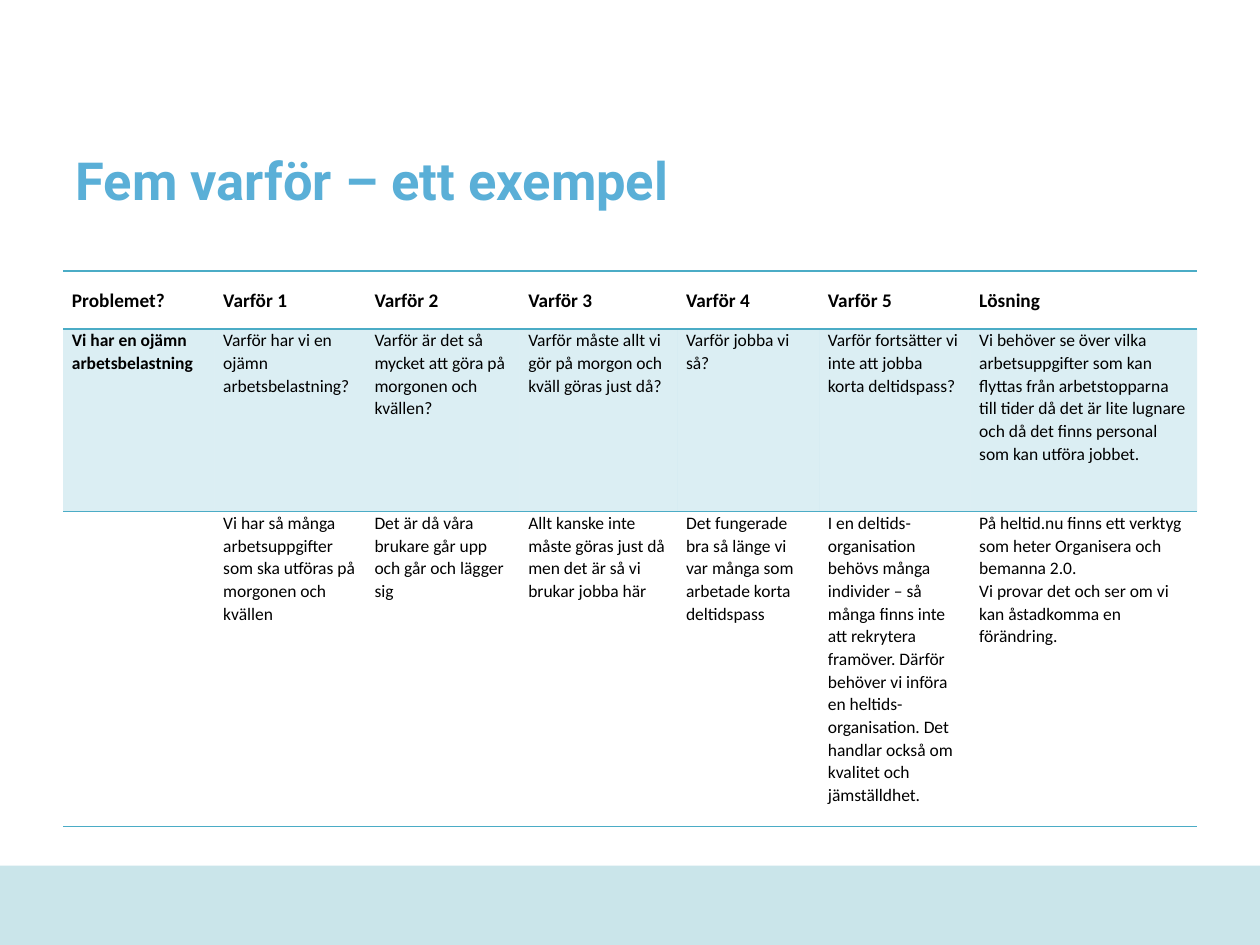
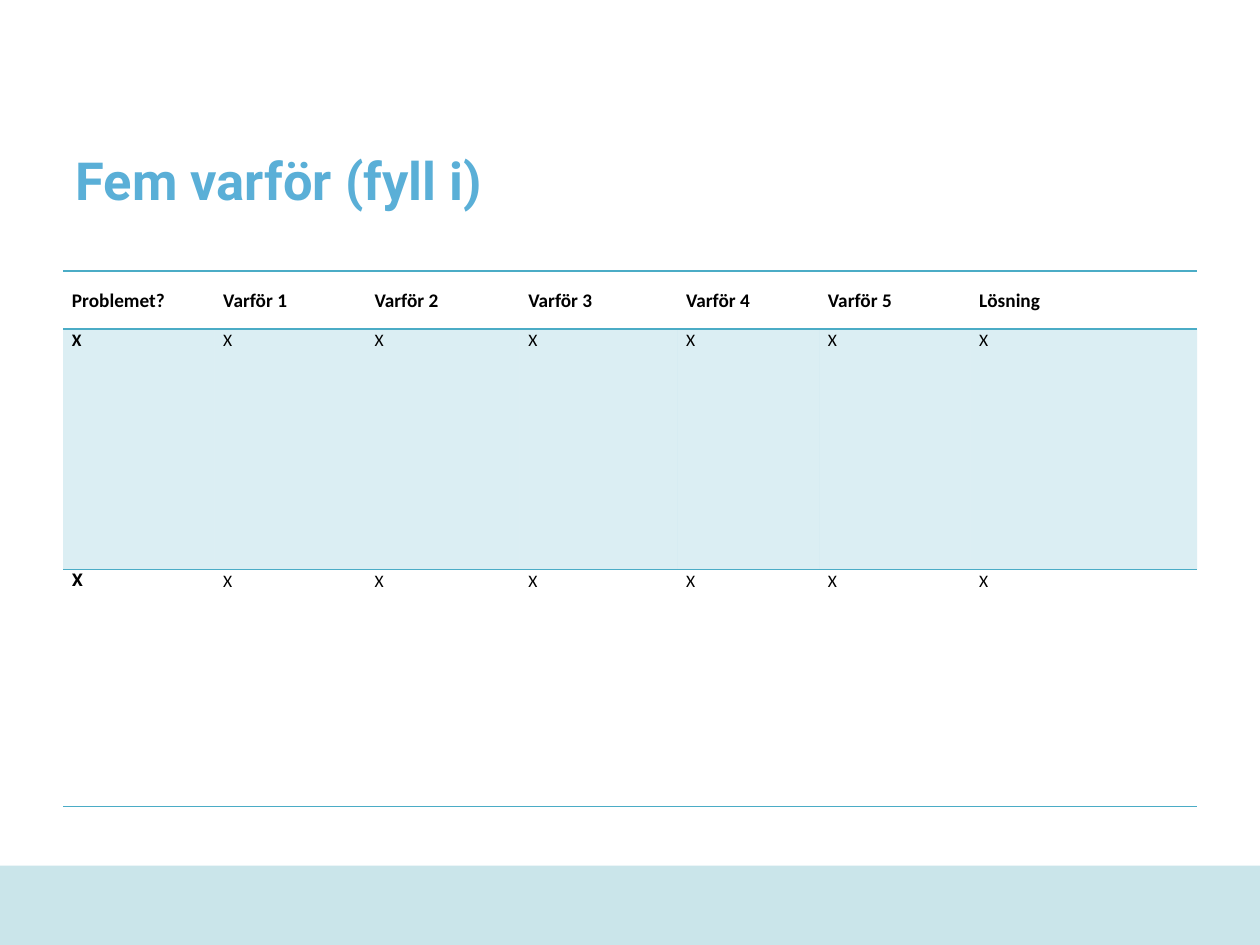
from dataclasses import dataclass

from lxml.etree import SubElement
from pptx import Presentation
from pptx.dml.color import RGBColor
from pptx.enum.shapes import MSO_SHAPE
from pptx.enum.text import MSO_ANCHOR, MSO_AUTO_SIZE, PP_ALIGN
from pptx.oxml.ns import qn
from pptx.util import Cm, Pt


@dataclass(frozen=True)
class Theme:
    title_color: str = "5AAFD7"
    footer_color: str = "CAE5EA"
    accent: str = "4BACC6"
    text_color: str = "000000"
    band_opacity: int = 20
    title_font: str = "Roboto"
    body_font: str = "Calibri"
    title_size: float = 30
    header_size: float = 11
    body_size: float = 10
    line_spacing: float = 1.07
    rule_width: float = 1


SLIDE_WIDTH, SLIDE_HEIGHT = Cm(25.4), Cm(19.05)
MARGIN = Cm(1.27)
NO_STYLE = "{2D5ABB26-0587-4C30-8999-92F81FD0307C}"
COLUMN_WIDTHS = [3.05, 3.05, 3.1, 3.18, 2.86, 3.05, 4.57]
HEADINGS = ["Problemet?", *(f"Varför {number}" for number in range(1, 6)), "Lösning"]

EXAMPLE_ROWS = [
    [
        "Vi har en ojämn arbetsbelastning",
        "Varför har vi en ojämn arbetsbelastning?",
        "Varför är det så mycket att göra på morgonen och kvällen?",
        "Varför måste allt vi gör på morgon och kväll göras just då?",
        "Varför jobba vi så?",
        "Varför fortsätter vi inte att jobba korta deltidspass?",
        "Vi behöver se över vilka arbetsuppgifter som kan flyttas från "
        "arbetstopparna till tider då det är lite lugnare och då det finns "
        "personal som kan utföra jobbet.",
    ],
    [
        "",
        "Vi har så många arbetsuppgifter som ska utföras på morgonen och kvällen",
        "Det är då våra brukare går upp och går och lägger sig",
        "Allt kanske inte måste göras just då men det är så vi brukar jobba här",
        "Det fungerade bra så länge vi var många som arbetade korta deltidspass",
        "I en deltids-organisation behövs många individer – så många finns inte "
        "att rekrytera framöver. Därför behöver vi införa en "
        "heltids-organisation. Det handlar också om kvalitet och jämställdhet.",
        "På heltid.nu finns ett verktyg som heter Organisera och bemanna 2.0.\n"
        "Vi provar det och ser om vi kan åstadkomma en förändring.",
    ],
]
BLANK_ROWS = [["X"] * len(HEADINGS)] * 2


def apply_format(target, values):
    for name, value in values.items():
        setattr(target, name, value)


class DeckBuilder:
    def __init__(self, theme):
        self.theme = theme
        self.deck = Presentation()
        self.deck.slide_width, self.deck.slide_height = SLIDE_WIDTH, SLIDE_HEIGHT
        self.page = None

    def add_page(self, title):
        self.page = self.deck.slides.add_slide(self.deck.slide_layouts[5])
        self.add_footer_band()
        self.set_title(title)

    def add_footer_band(self):
        top = Cm(17.45)
        band = self.page.shapes.add_shape(
            MSO_SHAPE.RECTANGLE, 0, top, SLIDE_WIDTH, SLIDE_HEIGHT - top)
        band.shadow.inherit = False
        band.fill.solid()
        band.fill.fore_color.rgb = RGBColor.from_string(self.theme.footer_color)
        band.line.fill.background()

    def set_title(self, text):
        box = self.page.shapes.title
        apply_format(box, dict(left=MARGIN, top=Cm(2.03),
                               width=SLIDE_WIDTH - 2 * MARGIN, height=Cm(3.18)))
        apply_format(box.text_frame, dict(
            text=text, word_wrap=True, auto_size=MSO_AUTO_SIZE.NONE,
            vertical_anchor=MSO_ANCHOR.MIDDLE))
        para = box.text_frame.paragraphs[0]
        para.alignment = PP_ALIGN.LEFT
        self.style_text(para.runs[0], self.theme.title_size, True,
                        self.theme.title_font, self.theme.title_color)

    def style_text(self, span, size, bold, font=None, color=None):
        apply_format(span.font, dict(
            name=font or self.theme.body_font, size=Pt(size), bold=bold))
        span.font.color.rgb = RGBColor.from_string(color or self.theme.text_color)

    def add_why_table(self, body_rows, row_heights, last_problem_font=None):
        rows = [HEADINGS, *body_rows]
        frame = self.page.shapes.add_table(
            len(rows), len(HEADINGS), MARGIN, Cm(5.46),
            Cm(sum(COLUMN_WIDTHS)), Cm(sum(row_heights)))
        table = frame.table
        apply_format(table, dict(first_row=False, horz_banding=False))
        frame._element.find(".//" + qn("a:tableStyleId")).text = NO_STYLE
        for column, width in zip(table.columns, COLUMN_WIDTHS):
            column.width = Cm(width)
        for row, height in zip(table.rows, row_heights):
            row.height = Cm(height)

        for row_index, texts in enumerate(rows):
            header, last = row_index == 0, row_index == len(rows) - 1
            for column_index, text in enumerate(texts):
                cell = table.cell(row_index, column_index)
                problem = column_index == 0
                self.fill_cell(cell, text, header, bold=header or problem,
                               font=last_problem_font if last and problem else None)
                # Rules frame the header and close the table
                if row_index < 2:
                    self.add_rule(cell, "a:lnT")
                if header or last:
                    self.add_rule(cell, "a:lnB")
                if row_index == 1:
                    self.shade(cell)
                else:
                    cell.fill.background()

    def fill_cell(self, cell, text, header, bold, font):
        apply_format(cell, dict(
            text=text, margin_left=Cm(0.18), margin_right=Cm(0.18),
            margin_top=0, margin_bottom=0,
            vertical_anchor=MSO_ANCHOR.MIDDLE if header else MSO_ANCHOR.TOP))
        size = self.theme.header_size if header else self.theme.body_size
        for para in cell.text_frame.paragraphs:
            para.line_spacing = self.theme.line_spacing
            for span in para.runs:
                self.style_text(span, size, bold, font)

    def add_rule(self, cell, edge):
        line = SubElement(cell._tc.get_or_add_tcPr(), qn(edge),
                          w=str(Pt(self.theme.rule_width)))
        fill = SubElement(line, qn("a:solidFill"))
        SubElement(fill, qn("a:srgbClr"), val=self.theme.accent)

    def shade(self, cell):
        cell.fill.solid()
        cell.fill.fore_color.rgb = RGBColor.from_string(self.theme.accent)
        color = cell._tc.tcPr.find(qn("a:solidFill")).find(qn("a:srgbClr"))
        SubElement(color, qn("a:alpha"), val=str(self.theme.band_opacity * 1000))


def main():
    theme = Theme()
    builder = DeckBuilder(theme)

    # Worked example
    builder.add_page("Fem varför – ett exempel")
    builder.add_why_table(EXAMPLE_ROWS, [1.17, 3.68, 6.35])

    # Form to fill in
    builder.add_page("Fem varför (fyll i)")
    builder.add_why_table(BLANK_ROWS, [1.17, 4.85, 4.78], theme.title_font)

    builder.deck.save("out.pptx")


if __name__ == "__main__":
    main()
